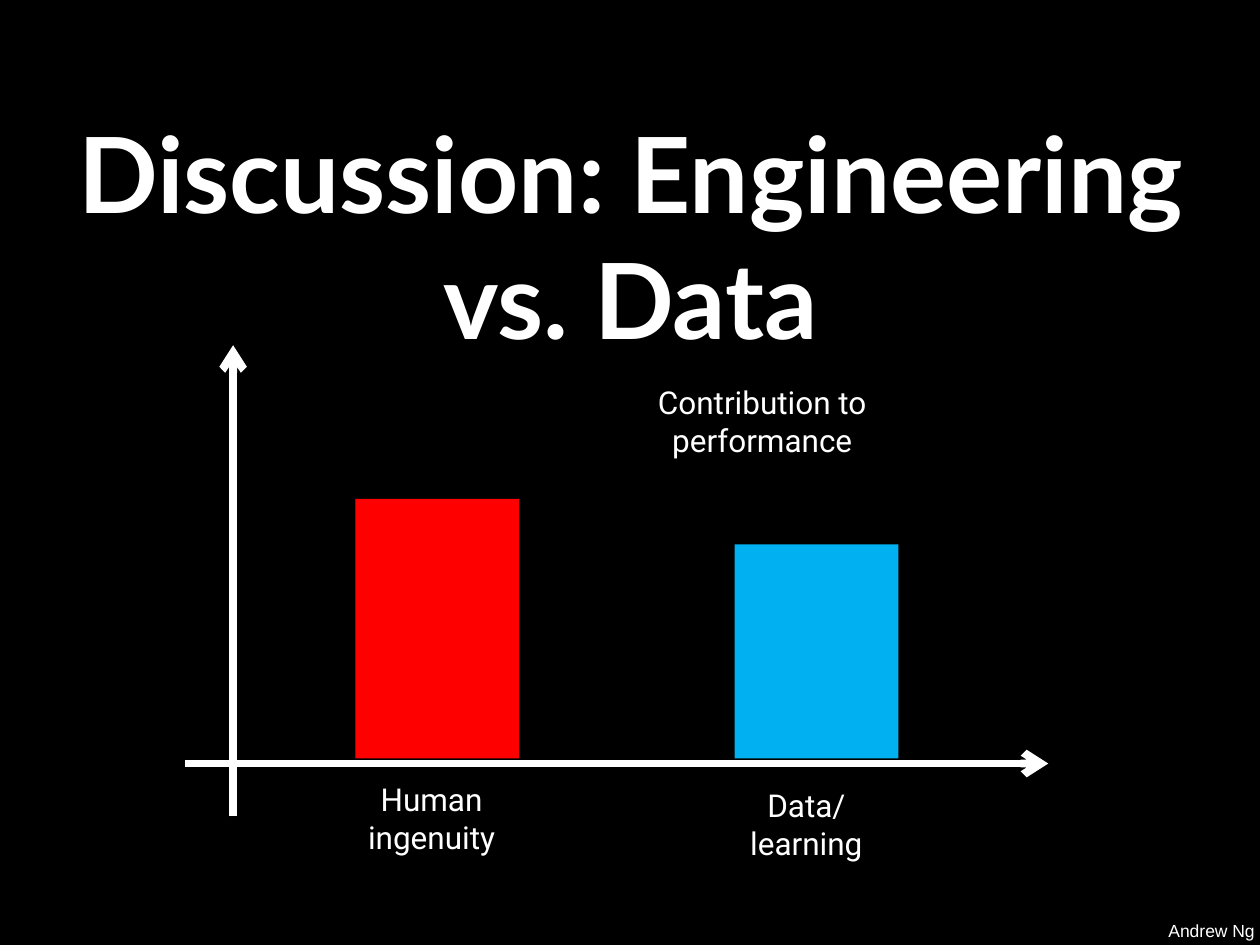
from lxml.etree import SubElement
from pptx import Presentation
from pptx.dml.color import RGBColor
from pptx.enum.shapes import MSO_CONNECTOR as Connector, MSO_SHAPE as Shape
from pptx.enum.text import PP_ALIGN as Align
from pptx.oxml.ns import qn
from pptx.util import Inches, Pt


class Theme:
    background = RGBColor(0, 0, 0)
    ink = RGBColor(255, 255, 255)
    human = RGBColor(255, 0, 0)
    data = RGBColor(0, 0xB0, 0xF0)
    title = ("Lato", 60, True)
    label = ("Roboto", 18, False)
    footer = ("Arial", 10, False)
    axis_width = 4.5


# Lines, box (left, top, width, height), type style, wraps, side inset
TEXTS = [
    (["Andrew Ng"], (9.17, 7.25, 0.89, 0.27), Theme.footer, False, 0.1),
    (["Discussion: Engineering vs. Data"], (0.25, 0.81, 9.51, 1.11), Theme.title, True, 0.1),
    (["Human", "ingenuity"], (2.82, 6.14, 1.21, 0.71), Theme.label, False, 0.1),
    (["Data/", "learning"], (5.85, 6.19, 1.1, 0.71), Theme.label, False, 0.1),
    (["Contribution to performance"], (5.12, 2.99, 1.86, 0.71), Theme.label, True, 0),
]
# Start x, y and arrow tip x, y
AXES = [(1.85, 6.48, 1.85, 2.74), (1.47, 6.06, 8.32, 6.06)]
# Left, height, colour
BARS = [(2.82, 2.06, Theme.human), (5.83, 1.7, Theme.data)]
BAR_WIDTH, BAR_BASE = 1.3, 6.02


def add_text(slide, lines, box, style, wraps, side_inset):
    frame = slide.shapes.add_textbox(*map(Inches, box)).text_frame
    frame.word_wrap = wraps
    frame.margin_left = frame.margin_right = Inches(side_inset)
    frame.text = "\n".join(lines)
    for paragraph in frame.paragraphs:
        paragraph.alignment = Align.CENTER
        font = paragraph.font
        font.name, size, font.bold = style
        font.size = Pt(size)
        font.color.rgb = Theme.ink


def add_axis(slide, ends):
    axis = slide.shapes.add_connector(Connector.STRAIGHT, *map(Inches, ends))
    axis.line.color.rgb = Theme.ink
    axis.line.width = Pt(Theme.axis_width)
    SubElement(axis.line._get_or_add_ln(), qn("a:tailEnd"), type="arrow")
    SubElement(axis._element.spPr, qn("a:effectLst"))


def add_bar(slide, left, height, color):
    box = (left, BAR_BASE - height, BAR_WIDTH, height)
    bar = slide.shapes.add_shape(Shape.RECTANGLE, *map(Inches, box))
    bar.shadow.inherit = False
    bar.fill.solid()
    bar.fill.fore_color.rgb = color
    bar.line.fill.background()


def main():
    deck = Presentation()
    deck.slide_width, deck.slide_height = Inches(10), Inches(7.5)
    slide = deck.slides.add_slide(deck.slide_layouts[6])
    slide.background.fill.solid()
    slide.background.fill.fore_color.rgb = Theme.background
    for ends in AXES:
        add_axis(slide, ends)
    for bar in BARS:
        add_bar(slide, *bar)
    for text in TEXTS:
        add_text(slide, *text)
    deck.save("out.pptx")


if __name__ == "__main__":
    main()
